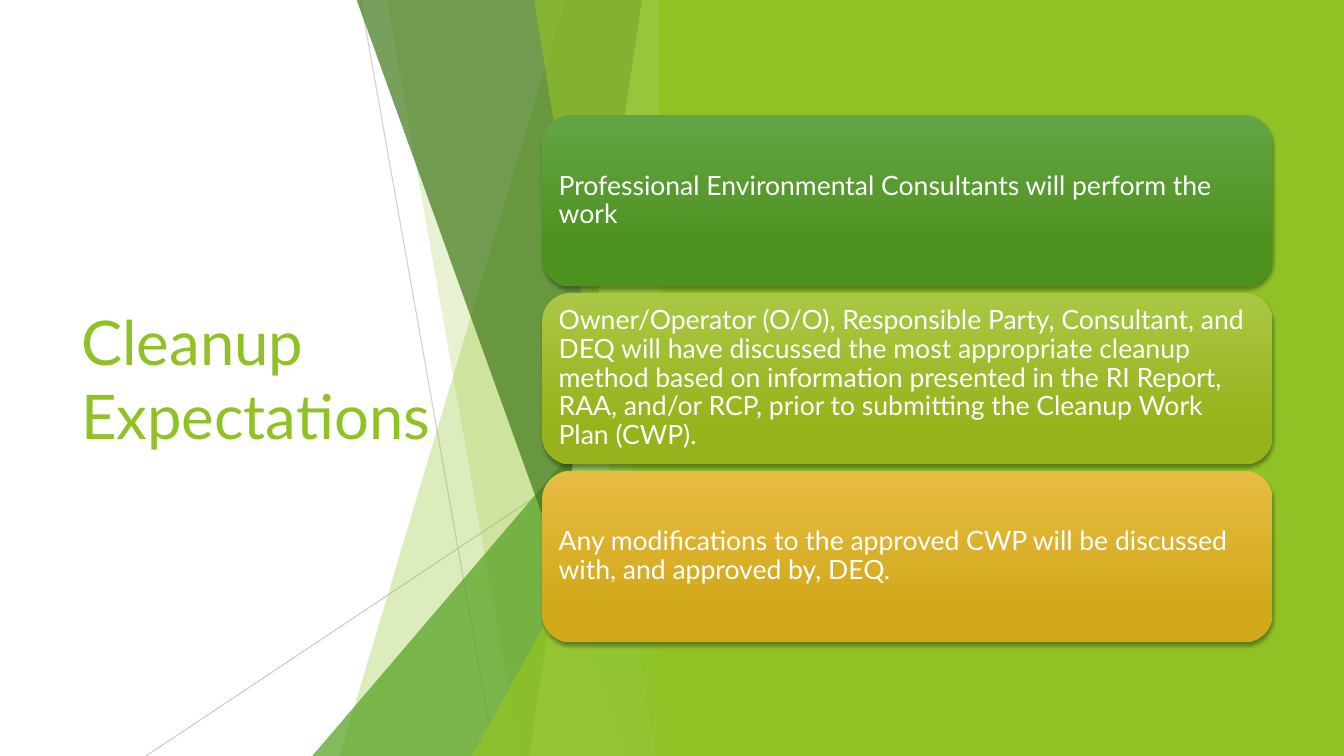
from lxml import etree
from pptx import Presentation
from pptx.dml.color import RGBColor
from pptx.enum import shapes, text
from pptx.oxml import ns
from pptx.util import Cm, Pt

LIME = RGBColor(0x90, 0xC2, 0x26)
GREEN = RGBColor(0x54, 0xA0, 0x21)
DARK = RGBColor(0x3F, 0x78, 0x19)
PALE = RGBColor(0xC0, 0xE4, 0x74)
GREY = RGBColor(0xBF, 0xBF, 0xBF)
WHITE = RGBColor(0xFF, 0xFF, 0xFF)
FONT = "Lato"
WIDE, HIGH = 33.87, 19.05
EDGE = 16.92  # right side shared by all facets


def add_sub(node, tag, **attrs):
    return etree.SubElement(node, ns.qn(tag), **attrs)


def set_alpha(shape, alpha):
    for color in shape._element.spPr.iter(ns.qn("a:srgbClr")):
        add_sub(color, "a:alpha", val=str(alpha * 1000))


prs = Presentation()
prs.slide_width, prs.slide_height = Cm(WIDE), Cm(HIGH)
slide = prs.slides.add_slide(prs.slide_layouts[6])
items = slide.shapes

# Title
title = items.add_textbox(Cm(1.8), Cm(3.84), Cm(9.86), Cm(11.38))
frame = title.text_frame
frame.word_wrap = True
frame.vertical_anchor = text.MSO_ANCHOR.MIDDLE
para = frame.paragraphs[0]
para.text = "Cleanup Expectations"
para.font.name, para.font.size = FONT, Pt(44)
para.font.color.rgb = LIME

# Thin crossing lines
for x1, y1, x2, alpha in [(9.09, 0, 12.47, 75), (EDGE, 10.24, 3.68, 80)]:
    line = items.add_connector(
        shapes.MSO_CONNECTOR.STRAIGHT, Cm(x1), Cm(y1), Cm(x2), Cm(HIGH))
    line.line.color.rgb = GREY
    line.line.width = Pt(0.75)
    set_alpha(line, alpha)
    add_sub(line._element.spPr, "a:effectLst")

# Facets: left x at the top, left x at the base, top y, colour, opacity
for top, base, y, color, alpha in [
    (14.25, 8.56, 0, LIME, 30),
    (9.75, 13.11, 0, LIME, 20),
    (EDGE, 7.87, 8.46, GREEN, 72),
    (8.99, 15.85, 0, DARK, 70),
    (16.18, 13.34, 0, PALE, 70),
    (13.46, 16.54, 0, LIME, 65),
    (EDGE, 11.89, 9.98, LIME, 80),
]:
    if top == EDGE:
        facet = items.add_shape(
            shapes.MSO_SHAPE.ISOSCELES_TRIANGLE,
            Cm(base), Cm(y), Cm(EDGE - base), Cm(HIGH - y))
        facet.adjustments[0] = 1
    else:
        pen = items.build_freeform(Cm(top), Cm(y))
        pen.add_line_segments([
            (Cm(EDGE), Cm(y)), (Cm(EDGE), Cm(HIGH)), (Cm(base), Cm(HIGH))])
        facet = pen.convert_to_shape()
    facet.fill.solid()
    facet.fill.fore_color.rgb = color
    facet.line.fill.background()
    facet.shadow.inherit = False
    set_alpha(facet, alpha)

# Right panel
panel = items.add_shape(
    shapes.MSO_SHAPE.RECTANGLE, Cm(16.61), 0, Cm(WIDE - 16.61), Cm(HIGH))
panel.fill.solid()
panel.fill.fore_color.rgb = LIME
panel.line.fill.background()
panel.shadow.inherit = False

# Expectation cards
cards = [
    ("63A545", "4D921E",
     "Professional Environmental Consultants will perform the work"),
    ("AAC744", "97B31C",
     "Owner/Operator (O/O), Responsible Party, Consultant, and DEQ will have "
     "discussed the most appropriate cleanup method based on information "
     "presented in the RI Report, RAA, and/or RCP, prior to submitting the "
     "Cleanup Work Plan (CWP)."),
    ("E7BC43", "D2A91B",
     "Any modifications to the approved CWP will be discussed with, and "
     "approved by, DEQ."),
]
for i, (light, deep, words) in enumerate(cards):
    card = items.add_shape(
        shapes.MSO_SHAPE.ROUNDED_RECTANGLE,
        Cm(13.67), Cm(2.9 + 4.48 * i), Cm(18.4), Cm(4.32))
    card.fill.gradient()
    card.fill.gradient_angle = 270
    for stop, place, tint in zip(
            card.fill.gradient_stops, (0, 0.78), (light, deep)):
        stop.position = place
        stop.color.rgb = RGBColor.from_string(tint)
    card.line.fill.background()

    # Soft shadow below the card
    card.shadow.inherit = False
    glow = add_sub(
        card._element.spPr.find(ns.qn("a:effectLst")), "a:outerShdw",
        blurRad=str(Pt(3)), dist=str(Pt(2)), dir="5400000", rotWithShape="0")
    shade = add_sub(glow, "a:srgbClr", val="000000")
    add_sub(shade, "a:alpha", val="35000")

    # The rounded corners already inset the text by about 0.2 cm
    frame = card.text_frame
    frame.word_wrap = True
    frame.vertical_anchor = text.MSO_ANCHOR.MIDDLE
    frame.margin_left = frame.margin_right = Cm(0.2)
    frame.margin_top = frame.margin_bottom = Cm(0.2)
    para = frame.paragraphs[0]
    para.text = words
    para.alignment = text.PP_ALIGN.LEFT
    para.line_spacing = 0.9
    para.font.name, para.font.size = FONT, Pt(19)
    para.font.color.rgb = WHITE

prs.save("out.pptx")
